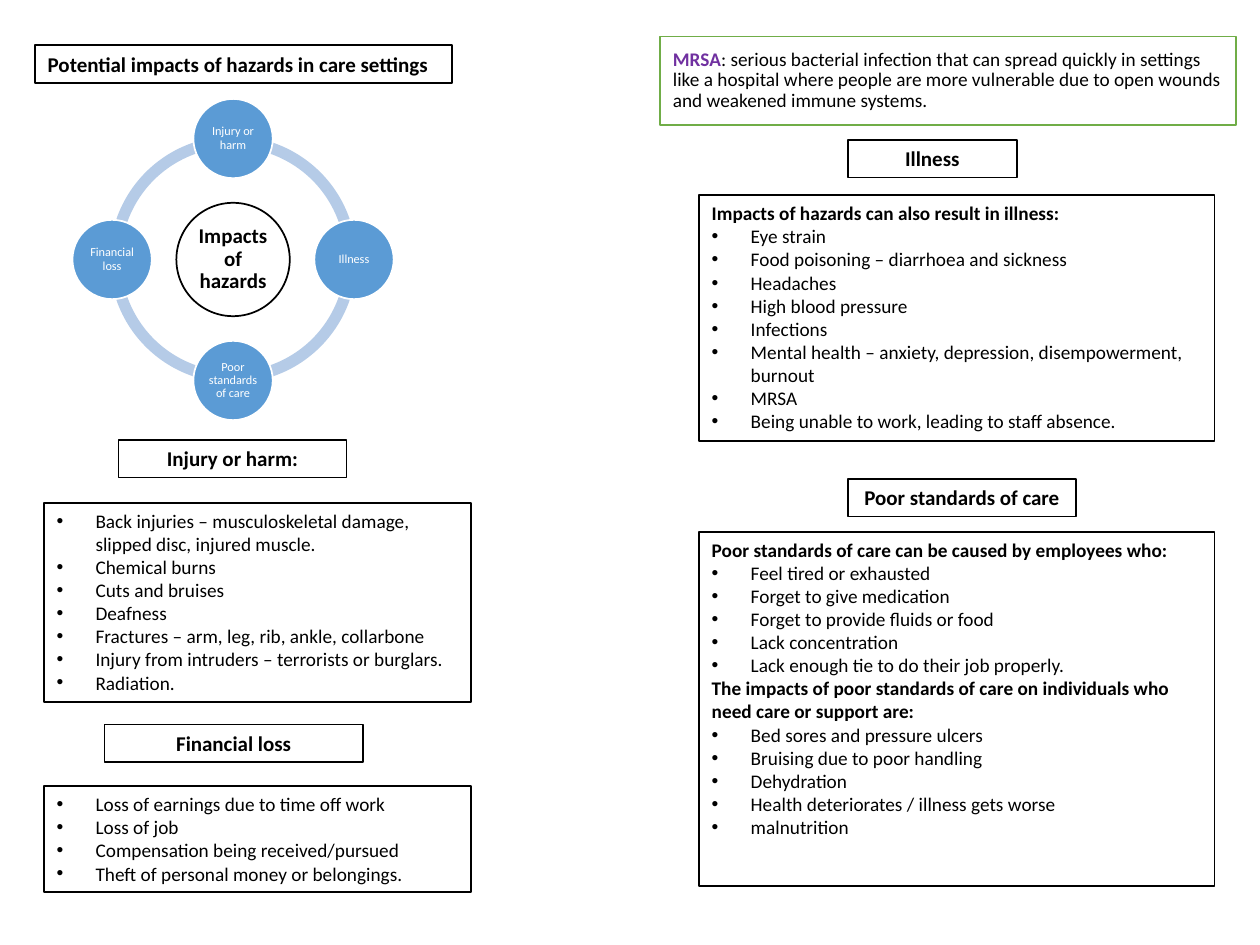
"""Build a slide on the potential impacts of hazards in care settings."""
from dataclasses import dataclass
from math import cos, pi, sin

from lxml.etree import SubElement
from pptx import Presentation
from pptx.dml.color import RGBColor
from pptx.enum.shapes import MSO_SHAPE
from pptx.enum.text import MSO_ANCHOR, MSO_AUTO_SIZE, PP_ALIGN
from pptx.oxml.ns import qn
from pptx.util import Inches, Pt

BLACK = RGBColor(0x00, 0x00, 0x00)
WHITE = RGBColor(0xFF, 0xFF, 0xFF)
BLUE = RGBColor(0x5B, 0x9B, 0xD5)
PALE_BLUE = RGBColor(0xB5, 0xCB, 0xE7)
GREEN = RGBColor(0x70, 0xAD, 0x47)
PURPLE = RGBColor(0x70, 0x30, 0xA0)
FONT = "Calibri"
INDENT = Inches(0.31)
RING_X, RING_Y = 1.85, 2.06
ORBIT = 0.96


@dataclass
class Heading:
    text: str
    left: float
    top: float
    width: float
    align: PP_ALIGN = PP_ALIGN.CENTER


@dataclass
class Section:
    heading: str
    bullets: list[str]


@dataclass
class Panel:
    left: float
    top: float
    width: float
    height: float
    sections: list[Section]


HEADINGS = [
    Heading("Potential impacts of hazards in care settings", 0.28, 0.36, 3.31, PP_ALIGN.LEFT),
    Heading("Injury or harm:", 0.94, 3.49, 1.81),
    Heading("Illness", 6.73, 1.11, 1.34),
    Heading("Financial loss", 0.83, 5.75, 2.05),
    Heading("Poor standards of care", 6.73, 3.8, 1.81),
]

PANELS = [
    Panel(0.35, 3.99, 3.39, 1.58, [Section("", [
        "Back injuries – musculoskeletal damage, slipped disc, injured muscle.",
        "Chemical burns",
        "Cuts and bruises",
        "Deafness",
        "Fractures – arm, leg, rib, ankle, collarbone",
        "Injury from intruders – terrorists or burglars.",
        "Radiation.",
    ])]),
    Panel(0.35, 6.24, 3.39, 0.84, [Section("", [
        "Loss of earnings due to time off work",
        "Loss of job",
        "Compensation being received/pursued",
        "Theft of personal money or belongings.",
    ])]),
    Panel(5.55, 1.55, 4.09, 1.95, [Section("Impacts of hazards can also result in illness:", [
        "Eye strain",
        "Food poisoning – diarrhoea and sickness",
        "Headaches",
        "High blood pressure",
        "Infections",
        "Mental health – anxiety, depression, disempowerment, burnout",
        "MRSA",
        "Being unable to work, leading to staff absence.",
    ])]),
    Panel(5.55, 4.22, 4.09, 2.81, [
        Section("Poor standards of care can be caused by employees who:", [
            "Feel tired or exhausted",
            "Forget to give medication",
            "Forget to provide fluids or food",
            "Lack concentration",
            "Lack enough tie to do their job properly.",
        ]),
        Section("The impacts of poor standards of care on individuals who need care or support are:", [
            "Bed sores and pressure ulcers",
            "Bruising due to poor handling",
            "Dehydration",
            "Health deteriorates / illness gets worse",
            "malnutrition",
        ]),
    ]),
]

NODES = ["Injury or harm", "Illness", "Poor standards of care", "Financial loss"]


def style_run(r, size: float, color: RGBColor = BLACK, bold: bool = False) -> None:
    r.font.name = FONT
    r.font.size = Pt(size)
    r.font.color.rgb = color
    r.font.bold = bold


def paint(sp, fill: RGBColor, line: RGBColor) -> None:
    sp.fill.solid()
    sp.fill.fore_color.rgb = fill
    sp.line.color.rgb = line
    sp.line.width = Pt(1)


def add_box(shapes, left: float, top: float, width: float, height: float):
    sp = shapes.add_textbox(Inches(left), Inches(top), Inches(width), Inches(height))
    paint(sp, WHITE, BLACK)
    sp.text_frame.word_wrap = True
    return sp


def add_heading(shapes, heading: Heading) -> None:
    sp = add_box(shapes, heading.left, heading.top, heading.width, 0.3)
    p = sp.text_frame.paragraphs[0]
    p.text = heading.text
    p.alignment = heading.align
    style_run(p.runs[0], 12, bold=True)


def add_bullet(p) -> None:
    pPr = p._p.get_or_add_pPr()
    pPr.set("marL", str(INDENT))
    pPr.set("indent", str(-INDENT))
    SubElement(pPr, qn("a:buFont")).set("typeface", "Arial")
    SubElement(pPr, qn("a:buChar")).set("char", "•")


def add_panel(shapes, panel: Panel) -> None:
    tf = add_box(shapes, panel.left, panel.top, panel.width, panel.height).text_frame
    lines = [(text, i == 0) for section in panel.sections
             for i, text in enumerate([section.heading, *section.bullets]) if text]
    for i, (text, is_heading) in enumerate(lines):
        p = tf.add_paragraph() if i else tf.paragraphs[0]
        p.text = text
        style_run(p.runs[0], 11, bold=is_heading)
        if not is_heading:
            add_bullet(p)


def add_circle(shapes, x: float, y: float, size: float, text: str, points: float,
               fill: RGBColor, ink: RGBColor, line: RGBColor, inset: float) -> None:
    sp = shapes.add_shape(MSO_SHAPE.OVAL, Inches(x - size / 2), Inches(y - size / 2),
                          Inches(size), Inches(size))
    sp.shadow.inherit = False
    paint(sp, fill, line)
    tf = sp.text_frame
    tf.word_wrap = True
    tf.vertical_anchor = MSO_ANCHOR.MIDDLE
    tf.margin_left = tf.margin_right = tf.margin_top = tf.margin_bottom = Inches(inset)
    p = tf.paragraphs[0]
    p.text = text
    p.alignment = PP_ALIGN.CENTER
    p.line_spacing = 0.9
    style_run(p.runs[0], points, ink, bold=fill == WHITE)


def add_cycle(shapes) -> None:
    size = 1.96
    for start in (108, 54, 0, 162):
        arc = shapes.add_shape(MSO_SHAPE.BLOCK_ARC, Inches(RING_X - size / 2),
                               Inches(RING_Y - size / 2), Inches(size), Inches(size))
        for i, value in enumerate((start, (start + 54) % 216, 0.046)):
            arc.adjustments[i] = value
        arc.shadow.inherit = False
        arc.fill.solid()
        arc.fill.fore_color.rgb = PALE_BLUE
        arc.line.fill.background()
    add_circle(shapes, RING_X, RING_Y, 0.9, "Impacts of hazards", 12, WHITE, BLACK, BLACK, 0.02)
    for i, text in enumerate(NODES):
        angle = 2 * pi * i / len(NODES)
        add_circle(shapes, RING_X + ORBIT * sin(angle), RING_Y - ORBIT * cos(angle),
                   0.63, text, 7, BLUE, WHITE, WHITE, 0.01)


def format_title(sp) -> None:
    sp.left, sp.top, sp.width, sp.height = Inches(5.24), Inches(0.29), Inches(4.57), Inches(0.7)
    paint(sp, WHITE, GREEN)
    tf = sp.text_frame
    tf.word_wrap = True
    tf.auto_size = MSO_AUTO_SIZE.NONE
    tf.vertical_anchor = MSO_ANCHOR.MIDDLE
    p = tf.paragraphs[0]
    p.alignment = PP_ALIGN.LEFT
    p.line_spacing = 0.9
    for text, color, bold in (
        ("MRSA", PURPLE, True),
        (": serious bacterial infection that can spread quickly in settings like a hospital where "
         "people are more vulnerable due to open wounds and weakened immune systems.", BLACK, False),
    ):
        r = p.add_run()
        r.text = text
        style_run(r, 11, color, bold)


def main() -> None:
    prs = Presentation()
    prs.slide_width, prs.slide_height = Inches(10), Inches(7.5)
    s = prs.slides.add_slide(prs.slide_layouts[5])
    format_title(s.shapes.title)
    add_cycle(s.shapes)
    for heading in HEADINGS:
        add_heading(s.shapes, heading)
    for panel in PANELS:
        add_panel(s.shapes, panel)
    prs.save("out.pptx")


if __name__ == "__main__":
    main()
